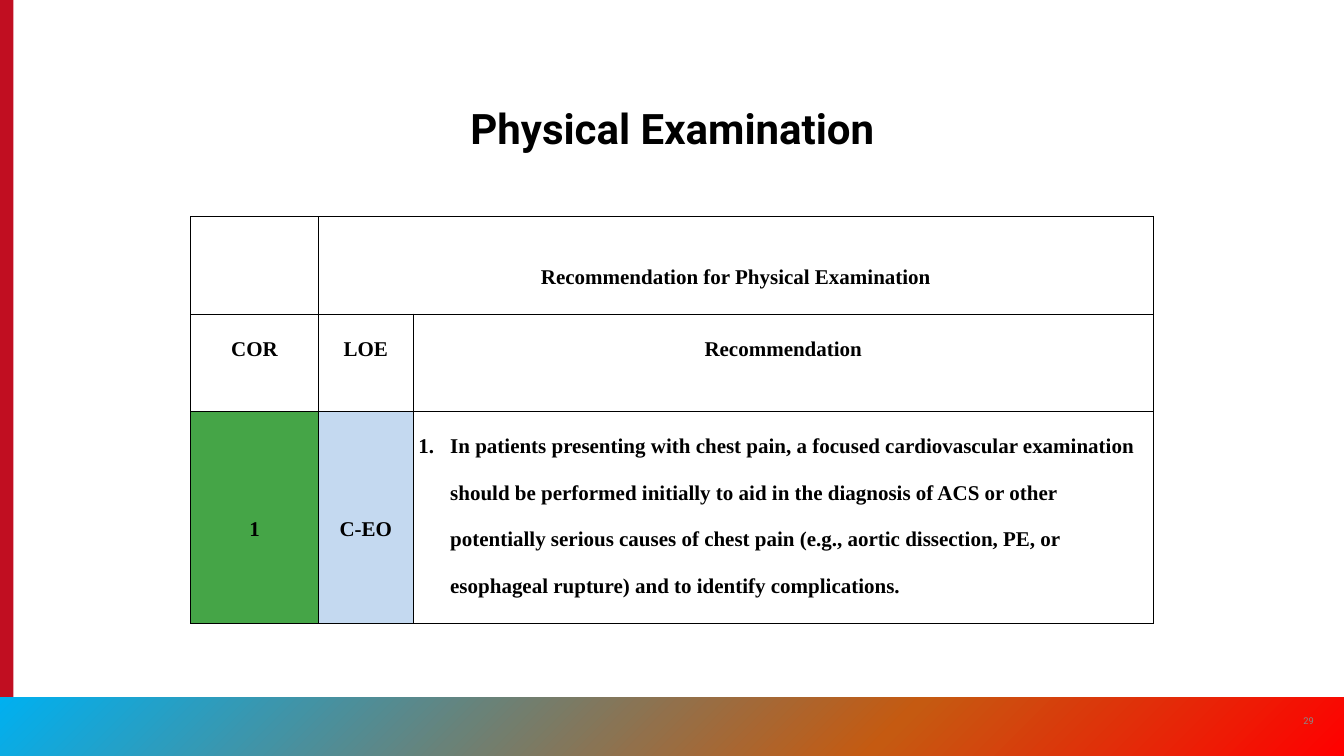
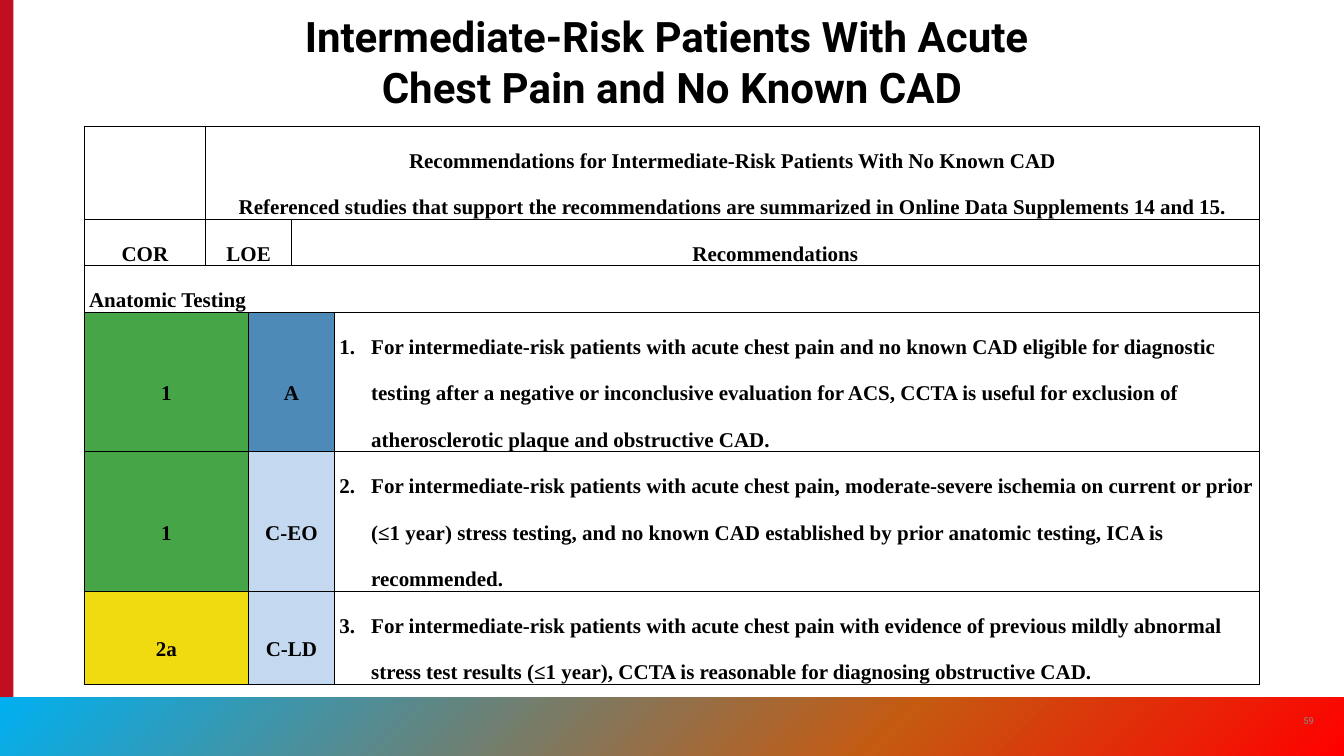
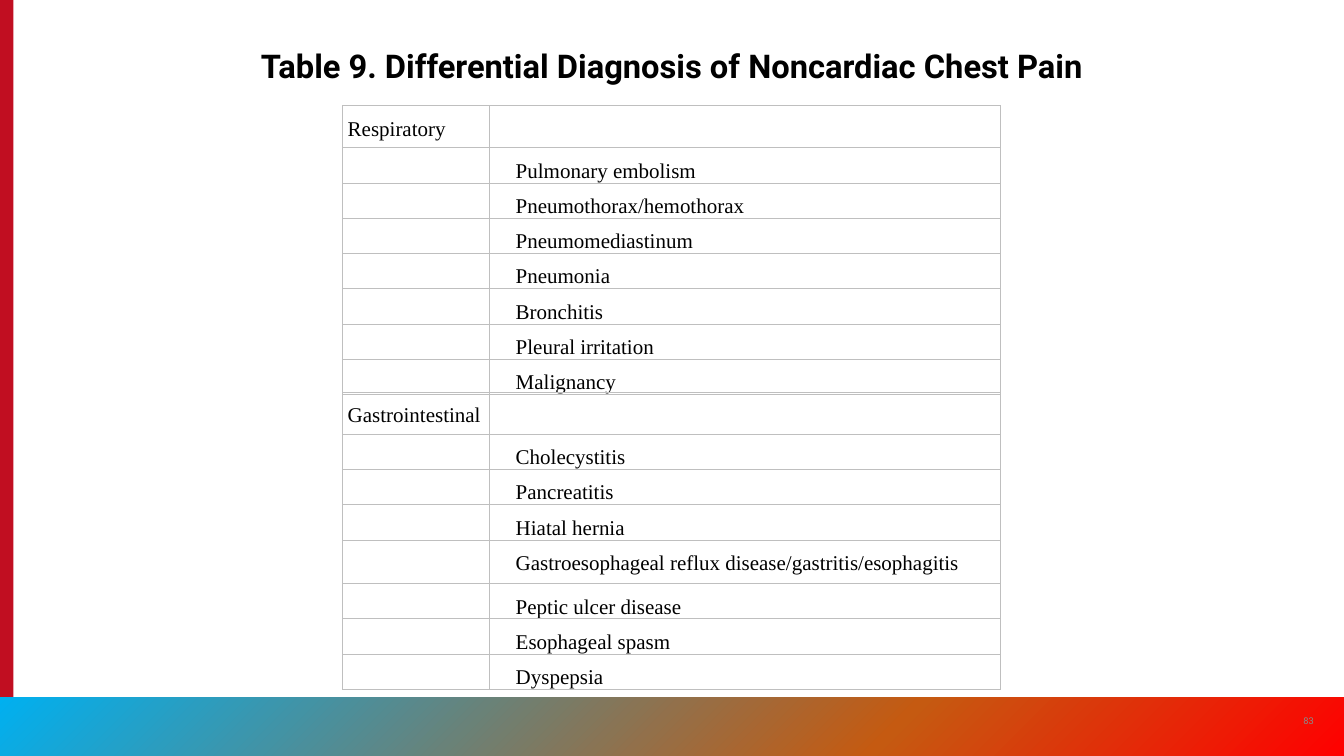
from lxml.etree import SubElement as Sub
from pptx import Presentation
from pptx.dml.color import RGBColor
from pptx.enum.shapes import MSO_SHAPE as Shape
from pptx.enum.text import MSO_ANCHOR as Anchor, MSO_AUTO_SIZE as Fit, PP_ALIGN as Align
from pptx.oxml.ns import qn
from pptx.util import Inches, Pt

WIDE, HIGH = Inches(16), Inches(9)
COL, ROW = WIDE / 16, HIGH / 9

BLACK = RGBColor(0x00, 0x00, 0x00)
GRAY = RGBColor(0x8A, 0x8B, 0x8A)
SILVER = RGBColor(0xBF, 0xBF, 0xBF)
CRIMSON = RGBColor(0xC1, 0x0E, 0x21)
SKY = RGBColor(0x00, 0xB0, 0xF0)
RUST = RGBColor(0xC5, 0x5A, 0x11)
RED = RGBColor(0xFF, 0x00, 0x00)
GREEN = RGBColor(0x45, 0xA5, 0x47)
YELLOW = RGBColor(0xF0, 0xDA, 0x10)
BLUE = RGBColor(0x4E, 0x8A, 0xB7)
PALE = RGBColor(0xC4, 0xD9, 0xF0)

TINTS = {"1": GREEN, "2a": YELLOW, "A": BLUE, "C-EO": PALE, "C-LD": PALE}
SANS, SERIF = "Roboto", "Times New Roman"
PAD, HANG, NEST = 0.06, 0.38, 0.25


def cols(n):
    return round(n * COL)


def rows(n):
    return round(n * ROW)


def area(x, y, w, h):
    return cols(x), rows(y), cols(w), rows(h)


def add_run(para, text, font, size, color, bold=False):
    run = para.add_run()
    run.text = text
    run.font.name, run.font.size, run.font.bold = font, Pt(size), bold
    run.font.color.rgb = color


def add_band(slide, color, *at):
    band = slide.shapes.add_shape(Shape.RECTANGLE, *area(*at))
    band.shadow.inherit = False
    band.fill.solid()
    band.fill.fore_color.rgb = color
    band.line.fill.background()
    return band


def blend(band, stops, angle):
    band.fill.gradient()
    band.fill.gradient_angle = 360 - angle
    group = band.element.spPr.find(qn("a:gradFill")).find(qn("a:gsLst"))
    for old in list(group):
        group.remove(old)
    for share, color in stops:
        stop = Sub(group, qn("a:gs"), pos=str(share * 1000))
        Sub(stop, qn("a:srgbClr"), val=str(color))


def dress(layout, slide):
    for spot in list(layout.placeholders)[1:]:
        spot.element.getparent().remove(spot.element)
    side = add_band(slide, CRIMSON, 0, 0, 0.16, 9)
    foot = add_band(slide, SKY, 0, 8.3, 16, 0.7)
    blend(foot, [(0, SKY), (66, RUST), (100, RED)], 45)
    for band in (side, foot):
        layout.shapes.element.append(band.element)


def add_title(slide, lines, size, *at):
    title = slide.shapes.title
    title.left, title.top, title.width, title.height = area(*at)
    frame = title.text_frame
    frame.word_wrap, frame.auto_size = True, Fit.NONE
    frame.vertical_anchor = Anchor.TOP
    for i, line in enumerate(lines):
        para = frame.add_paragraph() if i else frame.paragraphs[0]
        para.alignment = Align.CENTER
        add_run(para, line, SANS, size, BLACK, True)


def add_page(slide, number):
    frame = slide.shapes.add_textbox(*area(15.34, 8.34, 0.48, 0.48)).text_frame
    frame.word_wrap = True
    frame.vertical_anchor = Anchor.MIDDLE
    para = frame.paragraphs[0]
    para.alignment = Align.CENTER
    add_run(para, number, SANS, 8, GRAY)


def add_edges(cell, color):
    props = cell._tc.get_or_add_tcPr()
    for side in "LRTB":
        edge = Sub(props, qn(f"a:ln{side}"), w=str(Pt(1)))
        Sub(Sub(edge, qn("a:solidFill")), qn("a:srgbClr"), val=str(color))


def add_grid(slide, x, y, widths, heights, color):
    at = area(x, y, sum(widths), sum(heights))
    grid = slide.shapes.add_table(len(heights), len(widths), *at).table
    grid.first_row = grid.horz_banding = False
    for col, width in zip(grid.columns, widths):
        col.width = cols(width)
    for row, height in zip(grid.rows, heights):
        row.height = rows(height)
    for cell in grid.iter_cells():
        add_edges(cell, color)
        cell.fill.background()
    return grid


def write(cell, *lines, align=Align.CENTER, mid=False, space=2.0, bold=True, left=0, num=None):
    cell.margin_left = cell.margin_right = cols(PAD)
    cell.margin_top = cell.margin_bottom = 0
    cell.vertical_anchor = Anchor.MIDDLE if mid else Anchor.TOP
    for i, line in enumerate(lines):
        para = cell.text_frame.add_paragraph() if i else cell.text_frame.paragraphs[0]
        props = para._p.get_or_add_pPr()
        props.set("marL", str(cols(left)))
        props.set("indent", str(-cols(left) if num else 0))
        if num:
            Sub(props, qn("a:buAutoNum"), type="arabicPeriod", startAt=str(num))
        para.alignment, para.line_spacing = align, space
        add_run(para, line, SERIF, 18, BLACK, bold)


def merge(grid, row, first, last):
    grid.cell(row, first).merge(grid.cell(row, last))


def add_advice(grid, row, spots, grades, text, num):
    for spot, grade in zip(spots, grades):
        cell = grid.cell(row, spot)
        write(cell, grade, mid=True)
        cell.fill.solid()
        cell.fill.fore_color.rgb = TINTS[grade]
    write(grid.cell(row, spots[-1]), text, align=Align.LEFT, left=HANG, num=num)


def add_heads(grid, row, spots, heads):
    for spot, head in zip(spots, heads):
        write(grid.cell(row, spot), head)


def add_causes(slide, y, heights, group, causes):
    grid = add_grid(slide, 4.08, y, [1.75, 6.08], heights, SILVER)
    style = dict(align=Align.LEFT, space=1.5, bold=False)
    write(grid.cell(0, 0), group, **style)
    for row, cause in enumerate(causes, 1):
        write(grid.cell(row, 1), cause, left=NEST, **style)


def fill_exam(slide):
    add_title(slide, ["Physical Examination"], 36, 3.92, 1.17, 8.17, 0.8)
    grid = add_grid(slide, 2.27, 2.58, [1.52, 1.13, 8.81], [1.16, 1.16, 2.52], BLACK)
    merge(grid, 0, 1, 2)
    write(grid.cell(0, 1), "Recommendation for Physical Examination", mid=True)
    add_heads(grid, 1, range(3), ["COR", "LOE", "Recommendation"])
    add_advice(grid, 2, range(3), ["1", "C-EO"],
               "In patients presenting with chest pain, a focused cardiovascular examination "
               "should be performed initially to aid in the diagnosis of ACS or other "
               "potentially serious causes of chest pain (e.g., aortic dissection, PE, or "
               "esophageal rupture) and to identify complications.", 1)


def fill_risk(slide):
    add_title(slide, ["Intermediate-Risk Patients With Acute ", "Chest Pain and No Known CAD"],
              36, 2, 0.08, 12, 1.3)
    grid = add_grid(slide, 1, 1.5, [1.45, 0.51, 0.51, 0.51, 11.01],
                    [0.85, 0.46, 0.39, 1.31, 0.95, 0.95], BLACK)
    spans = [(0, 1, 4), (1, 1, 2), (1, 3, 4), (2, 0, 4)]
    spans += [(row, first, first + 1) for row in (3, 4, 5) for first in (0, 2)]
    for span in spans:
        merge(grid, *span)
    write(grid.cell(0, 1),
          "Recommendations for Intermediate-Risk Patients With No Known CAD",
          "Referenced studies that support the recommendations are summarized in "
          "Online Data Supplements 14 and 15.", mid=True)
    add_heads(grid, 1, (0, 1, 3), ["COR", "LOE", "Recommendations"])
    write(grid.cell(2, 0), "Anatomic Testing", align=Align.LEFT)
    advice = [
        (["1", "A"],
         "For intermediate-risk patients with acute chest pain and no known CAD eligible for "
         "diagnostic testing after a negative or inconclusive evaluation for ACS, CCTA is "
         "useful for exclusion of atherosclerotic plaque and obstructive CAD."),
        (["1", "C-EO"],
         "For intermediate-risk patients with acute chest pain, moderate-severe ischemia on "
         "current or prior (≤1 year) stress testing, and no known CAD established by prior "
         "anatomic testing, ICA is recommended."),
        (["2a", "C-LD"],
         "For intermediate-risk patients with acute chest pain with evidence of previous "
         "mildly abnormal stress test results (≤1 year), CCTA is reasonable for diagnosing "
         "obstructive CAD."),
    ]
    for num, (grades, text) in enumerate(advice, 1):
        add_advice(grid, num + 2, (0, 2, 4), grades, text, num)


def fill_causes(slide):
    add_title(slide, ["Table 9. Differential Diagnosis of Noncardiac Chest Pain"],
              28, 2.58, 0.5, 10.83, 0.7)
    add_causes(slide, 1.26, [0.5] + [0.42] * 7, "Respiratory",
               ["Pulmonary embolism", "Pneumothorax/hemothorax", "Pneumomediastinum",
                "Pneumonia", "Bronchitis", "Pleural irritation", "Malignancy"])
    add_causes(slide, 4.67, [0.5] + [0.42] * 3 + [0.52] + [0.42] * 3, "Gastrointestinal",
               ["Cholecystitis", "Pancreatitis", "Hiatal hernia",
                "Gastroesophageal reflux disease/gastritis/esophagitis",
                "Peptic ulcer disease", "Esophageal spasm", "Dyspepsia"])


def main():
    deck = Presentation()
    deck.slide_width, deck.slide_height = WIDE, HIGH
    layout = deck.slide_layouts[5]
    pages = [("29", fill_exam), ("59", fill_risk), ("83", fill_causes)]
    slides = [deck.slides.add_slide(layout) for page in pages]
    dress(layout, slides[0])
    for slide, (number, fill) in zip(slides, pages):
        fill(slide)
        add_page(slide, number)
    deck.save("out.pptx")


if __name__ == "__main__":
    main()
